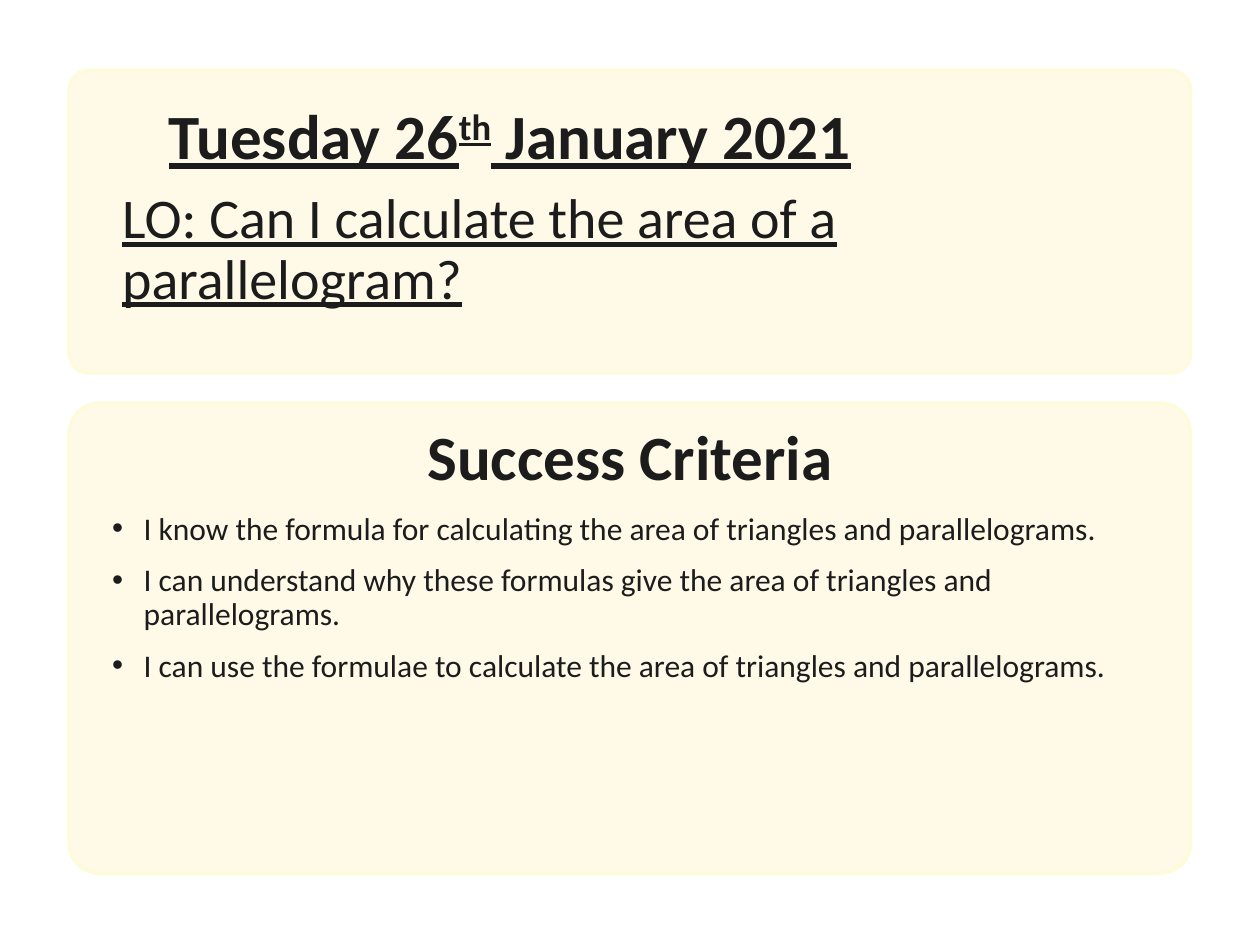
from pptx import Presentation
from pptx.dml.color import RGBColor
from pptx.enum.shapes import MSO_SHAPE as Shape
from pptx.enum.text import MSO_ANCHOR as Anchor, MSO_AUTO_SIZE as Fit, PP_ALIGN as Align
from pptx.oxml.ns import qn
from pptx.util import Inches, Pt
from lxml.etree import SubElement

INK = RGBColor(0x1C, 0x1C, 0x1C)
CREAM = RGBColor(0xFF, 0xF9, 0xE7)
EDGE = RGBColor(0xFE, 0xFB, 0xDA)

HEAD = {"size": Pt(36), "bold": True, "underline": False}
DATE = {**HEAD, "underline": True}
GOAL = {"size": Pt(32), "underline": True}
ITEM = {"size": Pt(18)}


def apply(target, values):
    for name, value in values.items():
        setattr(target, name, value)


class Page:
    """Holds the text style and the slide being built."""

    def __init__(self, slide):
        self.slide = slide
        self.base = {"name": "Calibri"}

    def panel(self, left, top, width, height):
        """Add a rounded card behind everything else."""
        card = self.slide.shapes.add_shape(
            Shape.ROUNDED_RECTANGLE, *map(Inches, (left, top, width, height)))
        card.adjustments[0] = 0.064
        card.shadow.inherit = False
        card.fill.solid()
        card.fill.fore_color.rgb = CREAM
        card.line.color.rgb = EDGE
        card.line.width = Pt(2)
        self.slide.shapes._spTree.insert(2, card._element)

    def frame(self, shape, box, pads, anchor):
        """Place a text shape and return its frame."""
        apply(shape, dict(zip(("left", "top", "width", "height"), map(Inches, box))))
        frame = shape.text_frame
        sides = ("margin_left", "margin_top", "margin_right", "margin_bottom")
        apply(frame, dict(zip(sides, map(Inches, pads))))
        apply(frame, {"word_wrap": True, "auto_size": Fit.NONE, "vertical_anchor": anchor})
        return frame

    def run(self, para, text, style, raised=False):
        run = para.add_run()
        run.text = text
        apply(run.font, {**self.base, **style})
        run.font.color.rgb = INK
        if raised:
            run.font._element.set("baseline", "30000")

    def title(self, shape, box, parts, style):
        """Fill a centred heading from (text, raised) parts."""
        para = self.frame(shape, box, (0, 0, 0, 0), Anchor.MIDDLE).paragraphs[0]
        apply(para, {"alignment": Align.CENTER, "line_spacing": 0.9, "space_before": Pt(0)})
        for text, raised in parts:
            self.run(para, text, style, raised)

    def body(self, shape, box, pads, lines, style, bullet=None):
        frame = self.frame(shape, box, pads, Anchor.TOP)
        for index, text in enumerate(lines):
            para = frame.add_paragraph() if index else frame.paragraphs[0]
            apply(para, {"alignment": Align.LEFT, "line_spacing": 0.9,
                         "space_before": Pt(10 if index else 0)})
            props = para._p.get_or_add_pPr()
            hang = Inches(0.25) if bullet else 0
            props.set("marL", str(hang))
            props.set("indent", str(-hang))
            if bullet:
                SubElement(props, qn("a:buFont")).set("typeface", "Arial")
                SubElement(props, qn("a:buChar")).set("char", bullet)
            else:
                SubElement(props, qn("a:buNone"))
            self.run(para, text, style)


def main():
    deck = Presentation()
    deck.slide_width, deck.slide_height = Inches(10), Inches(7.5)
    slide = deck.slides.add_slide(deck.slide_layouts[3])
    page = Page(slide)
    date, goal, steps = list(slide.placeholders)[:3]
    for extra in list(slide.placeholders)[3:]:
        extra._element.getparent().remove(extra._element)

    page.panel(0.55, 0.56, 8.9, 2.4)
    page.panel(0.55, 3.2, 8.9, 3.73)
    page.title(date, (-0.27, 0.81, 8.63, 0.59),
               [("Tuesday 26", False), ("th", True), (" January 2021", False)], DATE)
    page.body(goal, (0.69, 1.23, 8.62, 1.54), (0.28,) * 4,
              ["LO: Can I calculate the area of a parallelogram?"], GOAL)
    head = slide.shapes.add_textbox(0, 0, 0, 0)
    page.title(head, (0.69, 3.36, 8.62, 0.59), [("Success Criteria", False)], HEAD)
    page.body(steps, (0.69, 3.79, 8.62, 1.54), (0.2, 0.28, 0.28, 0.2), [
        "I know the formula for calculating the area of triangles and parallelograms.",
        "I can understand why these formulas give the area of triangles and parallelograms.",
        "I can use the formulae to calculate the area of triangles and parallelograms.",
    ], ITEM, "•")
    deck.save("out.pptx")


if __name__ == "__main__":
    main()
